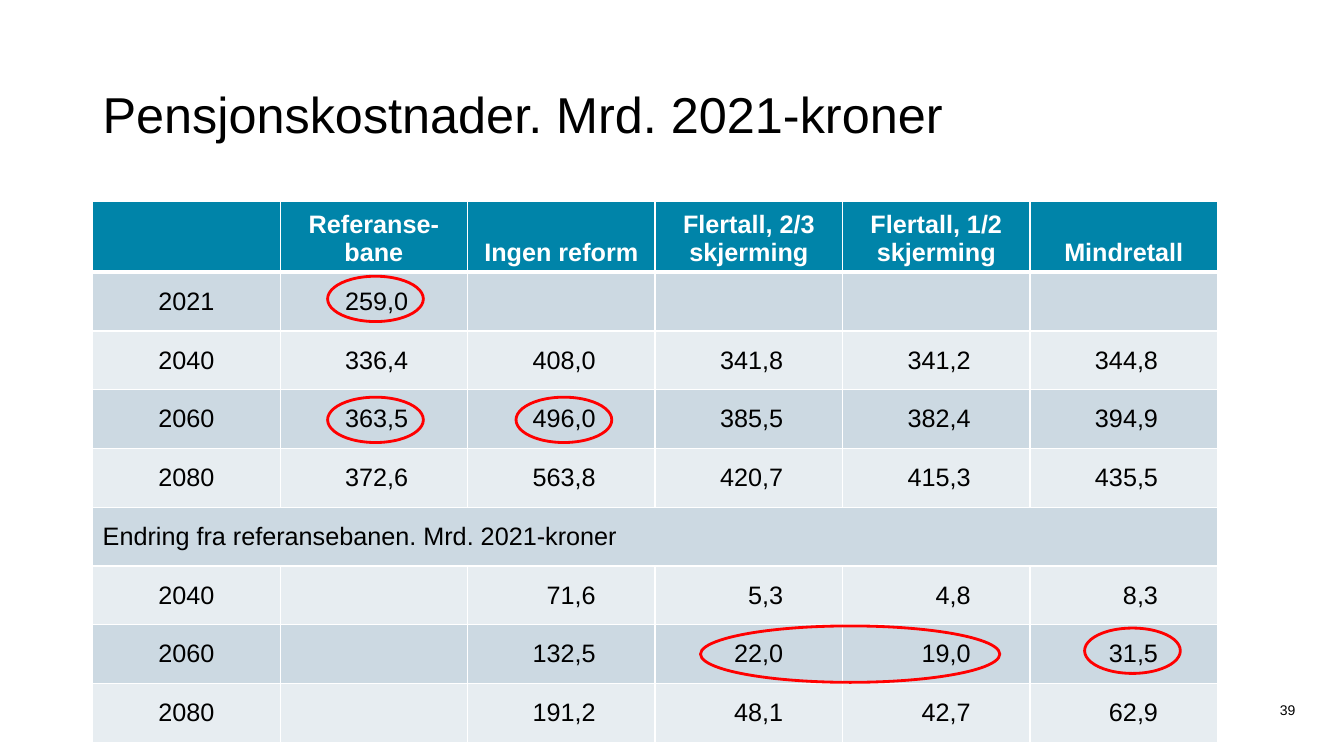
import pptx
import pptx.dml.color
import pptx.enum.shapes
import pptx.enum.text
import pptx.oxml.ns
import pptx.util
from lxml import etree

Pt = pptx.util.Pt
ALIGN = pptx.enum.text.PP_ALIGN
ANCHOR = pptx.enum.text.MSO_ANCHOR

COLORS = {
    "text": "000000",
    "white": "FFFFFF",
    "header": "0084A9",
    "dark_band": "CCD9E2",
    "light_band": "E7EDF1",
    "highlight": "FF0000",
}
FONT = "Arial"

HEADINGS = ["", "Referanse-bane", "Ingen reform", "Flertall, 2/3 skjerming",
            "Flertall, 1/2 skjerming", "Mindretall"]
COSTS = [
    ["2021", "259,0", "", "", "", ""],
    ["2040", "336,4", "408,0", "341,8", "341,2", "344,8"],
    ["2060", "363,5", "496,0", "385,5", "382,4", "394,9"],
    ["2080", "372,6", "563,8", "420,7", "415,3", "435,5"],
]
SUBHEADING = "Endring fra referansebanen. Mrd. 2021-kroner"
CHANGES = [
    ["2040", "", "71,6", "5,3", "4,8", "8,3"],
    ["2060", "", "132,5", "22,0", "19,0", "31,5"],
    ["2080", "", "191,2", "48,1", "42,7", "62,9"],
]
ROWS = [HEADINGS, *COSTS, [SUBHEADING] + [""] * 5, *CHANGES]
SUBHEADING_ROW = 1 + len(COSTS)

# Offsets from the table's corner, then width and height
HIGHLIGHTS = [
    (167.8, 53.3, 68.4, 32.4),
    (167.8, 139.7, 68.4, 32.4),
    (434.2, 303.1, 213.8, 40.3),
    (708.5, 304.6, 68.4, 32.4),
    (302.4, 139.7, 68.4, 32.4),
]


def rgb(name):
    return pptx.dml.color.RGBColor.from_string(COLORS[name])


def write(frame, text, size, align, color="text", bold=False):
    paragraph = frame.paragraphs[0]
    paragraph.text = text
    paragraph.alignment = align
    for run in paragraph.runs:
        run.font.name = FONT
        run.font.size = Pt(size)
        run.font.bold = bold
        run.font.color.rgb = rgb(color)


def add_label(slide, box, text, size, align, anchor, right_inset=7.2):
    label = slide.shapes.add_textbox(*map(Pt, box))
    frame = label.text_frame
    frame.word_wrap = True
    frame.vertical_anchor = anchor
    frame.margin_right = Pt(right_inset)
    write(frame, text, size, align)


def set_borders(cell, row):
    properties = cell._tc.get_or_add_tcPr()
    widths = {"lnL": 1, "lnR": 1, "lnT": 3 if row == 1 else 1, "lnB": 3 if row == 0 else 1}
    for side, width in widths.items():
        line = etree.SubElement(properties, pptx.oxml.ns.qn(f"a:{side}"), w=str(Pt(width)))
        fill = etree.SubElement(line, pptx.oxml.ns.qn("a:solidFill"))
        etree.SubElement(fill, pptx.oxml.ns.qn("a:srgbClr"), val=COLORS["white"])


def fill_cell(cell, row, column, text):
    set_borders(cell, row)
    band = "header" if row == 0 else "dark_band" if row % 2 else "light_band"
    cell.fill.solid()
    cell.fill.fore_color.rgb = rgb(band)
    cell.vertical_anchor = ANCHOR.BOTTOM if row == 0 else ANCHOR.MIDDLE
    if not text:
        return
    if row == 0:
        write(cell.text_frame, text, 18, ALIGN.CENTER, "white", bold=True)
    elif row == SUBHEADING_ROW:
        write(cell.text_frame, text, 18, ALIGN.LEFT)
    elif column == 0:
        write(cell.text_frame, text, 18, ALIGN.CENTER)
    else:
        cell.margin_right = Pt(42.5)
        write(cell.text_frame, text, 18, ALIGN.RIGHT)


def add_cost_table(slide, box):
    left, top, width, row_height = box
    costs = slide.shapes.add_table(len(ROWS), len(HEADINGS), Pt(left), Pt(top),
                                   Pt(width), Pt(row_height * len(ROWS))).table
    for column in costs.columns:
        column.width = Pt(width / len(HEADINGS))
    for row, texts in enumerate(ROWS):
        costs.rows[row].height = Pt(row_height)
        for column, text in enumerate(texts):
            fill_cell(costs.cell(row, column), row, column, text)
    costs.cell(SUBHEADING_ROW, 0).merge(costs.cell(SUBHEADING_ROW, len(HEADINGS) - 1))


def add_highlights(slide, box):
    left, top = box[:2]
    for dx, dy, width, height in HIGHLIGHTS:
        ring = slide.shapes.add_shape(pptx.enum.shapes.MSO_SHAPE.OVAL, Pt(left + dx),
                                      Pt(top + dy), Pt(width), Pt(height))
        ring.shadow.inherit = False
        ring.fill.background()
        ring.line.color.rgb = rgb("highlight")
        ring.line.width = Pt(2)


def main():
    deck = pptx.Presentation()
    deck.slide_width, deck.slide_height = Pt(960), Pt(540)
    slide = deck.slides.add_slide(deck.slide_layouts[6])

    # Title
    add_label(slide, (66.2, 28.8, 708.5, 104.4), "Pensjonskostnader. Mrd. 2021-kroner",
              36, ALIGN.LEFT, ANCHOR.MIDDLE)

    # Cost table with rings around the key figures
    table_box = (66.2, 144, 803.5, 42)
    add_cost_table(slide, table_box)

    # Page number
    add_label(slide, (885.6, 497.5, 39.6, 17.3), "39", 10, ALIGN.RIGHT, ANCHOR.TOP,
              right_inset=0)

    add_highlights(slide, table_box)
    deck.save("out.pptx")


if __name__ == "__main__":
    main()
